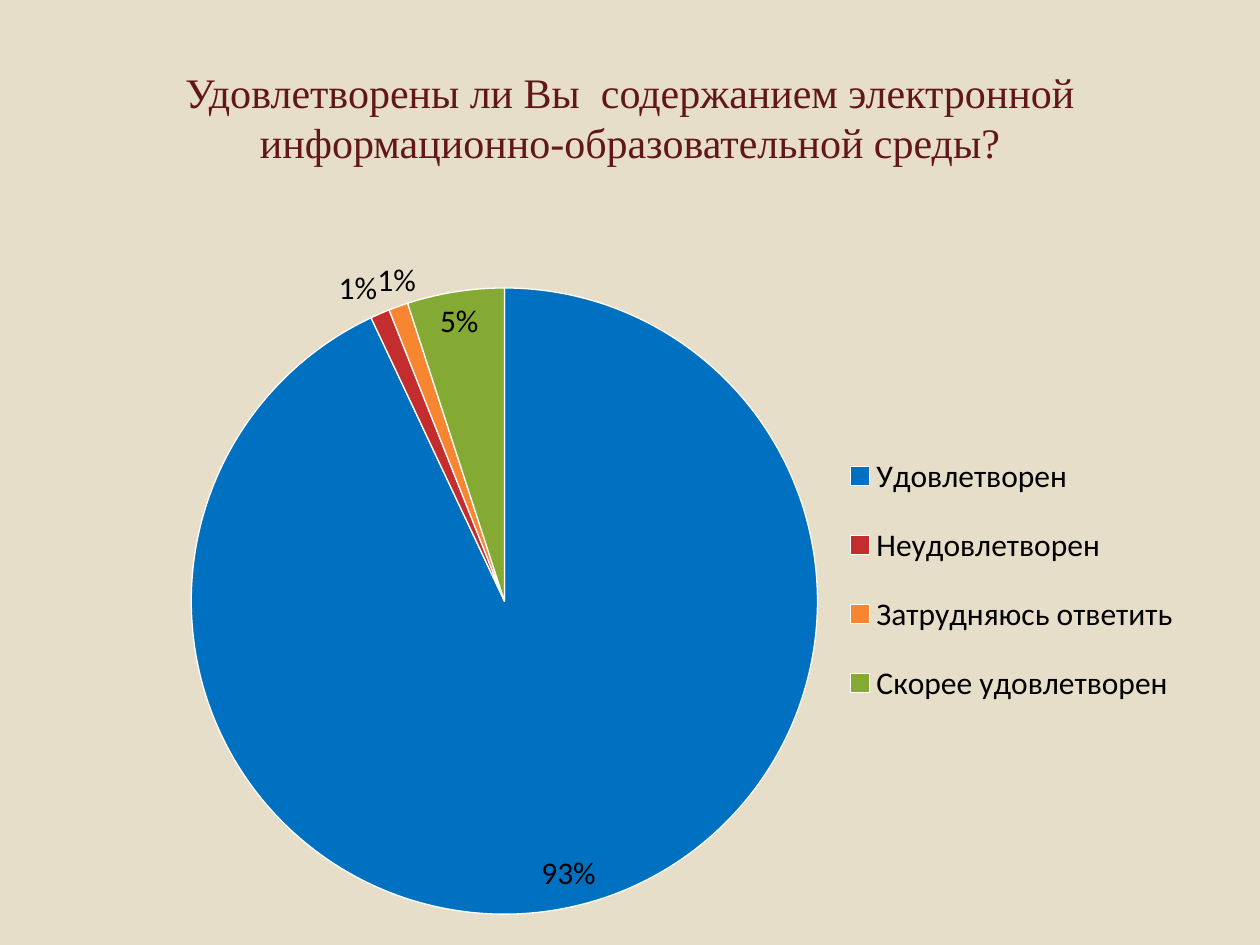
from lxml import etree
from pptx import Presentation
from pptx.chart.data import CategoryChartData
from pptx.dml.color import RGBColor
from pptx.enum.chart import XL_CHART_TYPE, XL_LABEL_POSITION, XL_LEGEND_POSITION
from pptx.enum.text import MSO_ANCHOR, PP_ALIGN
from pptx.oxml.ns import qn
from pptx.util import Inches, Pt

COLORS = {
    "background": "E7DEC9",
    "title": "621717",
    "text": "000000",
    "outline": "FFFFFF",
}
ANSWERS = [
    ("Удовлетворен", 93, "0070C0"),
    ("Неудовлетворен", 1, "C32D2E"),
    ("Затрудняюсь ответить", 1, "F88631"),
    ("Скорее удовлетворен", 5, "84AA33"),
]


def rgb(name):
    return RGBColor.from_string(COLORS[name])


def set_layout(element, before, left, top, width, height, inner=False):
    """Place a chart part by fractions of the chart box."""
    for old in element.findall(qn("c:layout")):
        element.remove(old)
    layout = etree.Element(qn("c:layout"))
    manual = etree.SubElement(layout, qn("c:manualLayout"))
    settings = [("layoutTarget", "inner")] if inner else []
    settings += [("xMode", "edge"), ("yMode", "edge"),
                 ("x", left), ("y", top), ("w", width), ("h", height)]
    for tag, value in settings:
        etree.SubElement(manual, qn(f"c:{tag}")).set("val", str(value))
    element.find(qn(before)).addprevious(layout)


def add_title(slide, left, top, width, height):
    box = slide.shapes.add_textbox(left, top, width, height)
    frame = box.text_frame
    frame.word_wrap = True
    frame.vertical_anchor = MSO_ANCHOR.MIDDLE
    paragraph = frame.paragraphs[0]
    paragraph.alignment = PP_ALIGN.CENTER
    run = paragraph.add_run()
    run.text = ("Удовлетворены ли Вы  содержанием электронной "
                "информационно-образовательной среды?")
    run.font.name = "Times New Roman"
    run.font.size = Pt(24)
    run.font.color.rgb = rgb("title")


def add_answer_pie(slide, left, top, width, height):
    data = CategoryChartData()
    data.categories = [name for name, _, _ in ANSWERS]
    data.add_series("Series 1", [value for _, value, _ in ANSWERS])
    chart = slide.shapes.add_chart(
        XL_CHART_TYPE.PIE, left, top, width, height, data).chart
    chart.has_title = False
    chart.font.name = "Calibri"
    chart.font.size = Pt(18)
    chart.font.color.rgb = rgb("text")

    plot = chart.plots[0]
    plot.vary_by_categories = True
    for index, (_, _, color) in enumerate(ANSWERS):
        point_format = plot.series[0].points[index].format
        point_format.fill.solid()
        point_format.fill.fore_color.rgb = RGBColor.from_string(color)
        point_format.line.color.rgb = rgb("outline")
        point_format.line.width = Pt(0.75)

    plot.has_data_labels = True
    labels = plot.data_labels
    labels.show_value = False
    labels.show_percentage = True
    labels.number_format = "0%"
    labels.number_format_is_linked = False
    labels.position = XL_LABEL_POSITION.BEST_FIT

    chart.has_legend = True
    chart.legend.position = XL_LEGEND_POSITION.RIGHT
    chart.legend.include_in_layout = False
    plot_area = chart.element.find(".//" + qn("c:plotArea"))
    legend = chart.element.find(".//" + qn("c:legend"))
    set_layout(plot_area, "c:pieChart", 0.017, 0.101, 0.613, 0.857, inner=True)
    set_layout(legend, "c:overlay", 0.65, 0.29, 0.34, 0.42)


def main():
    presentation = Presentation()
    presentation.slide_width = Inches(10)
    presentation.slide_height = Inches(7.5)
    slide = presentation.slides.add_slide(presentation.slide_layouts[6])
    slide.background.fill.solid()
    slide.background.fill.fore_color.rgb = rgb("background")
    add_title(slide, Inches(0.5), Inches(0.3), Inches(9), Inches(1.25))
    add_answer_pie(slide, Inches(1.38), Inches(1.7), Inches(8.11), Inches(5.8))
    presentation.save("out.pptx")


if __name__ == "__main__":
    main()
